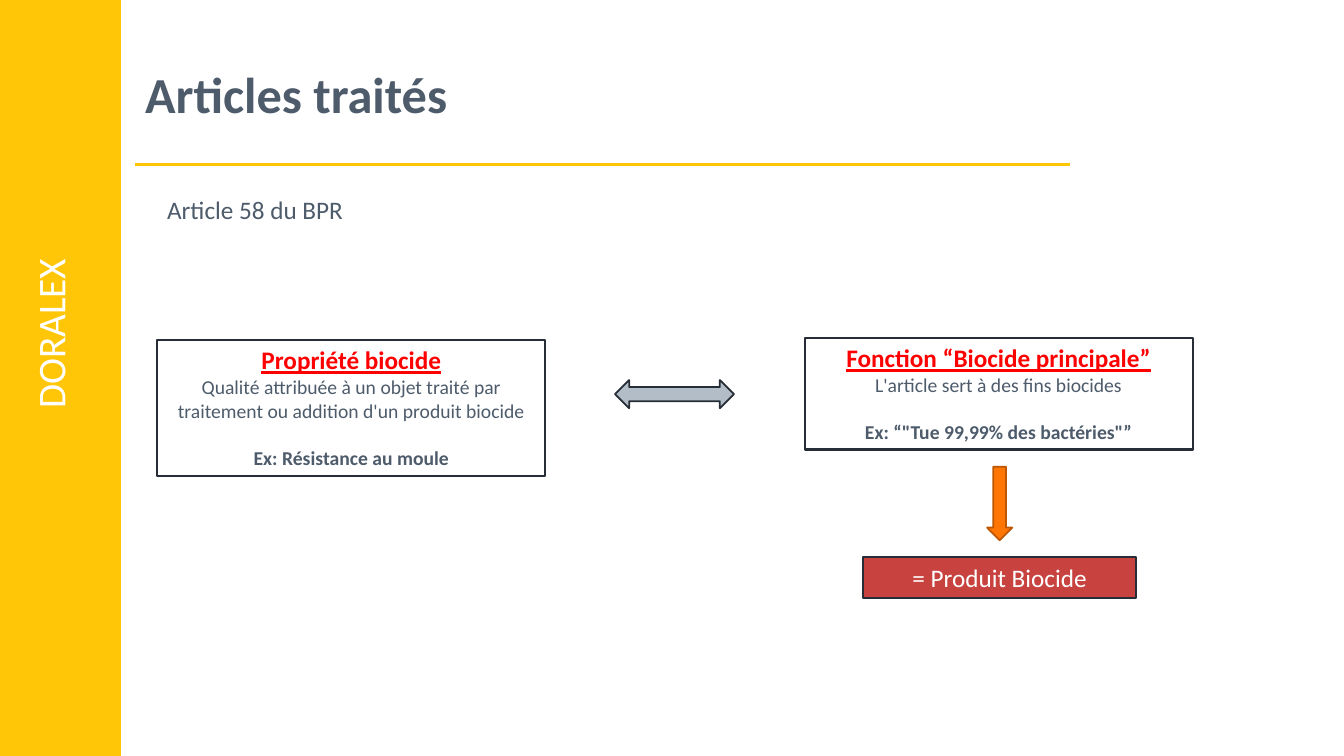
"""Build the slide on treated articles."""
from dataclasses import dataclass

from lxml.etree import SubElement
from pptx import Presentation
from pptx.dml.color import RGBColor
from pptx.enum.shapes import MSO_CONNECTOR, MSO_SHAPE
from pptx.enum.text import MSO_ANCHOR, PP_ALIGN
from pptx.oxml.ns import qn
from pptx.shapes.autoshape import Shape
from pptx.slide import Slide
from pptx.util import Inches, Pt

GOLD = RGBColor(0xFF, 0xC6, 0x08)
SLATE = RGBColor(0x4D, 0x5B, 0x6B)
DARK = RGBColor(0x26, 0x2D, 0x36)
RED = RGBColor(0xFF, 0x00, 0x00)
BRICK = RGBColor(0xC8, 0x43, 0x40)
GRAY = RGBColor(0xB3, 0xBD, 0xC8)
ORANGE = RGBColor(0xFF, 0x76, 0x05)
RUST = RGBColor(0xBD, 0x57, 0x04)
WHITE = RGBColor(0xFF, 0xFF, 0xFF)
FONT = "Calibri"


@dataclass(frozen=True)
class Area:
    left: float
    top: float
    width: float
    height: float

    def size(self) -> tuple[int, ...]:
        return tuple(Inches(n) for n in (self.left, self.top, self.width, self.height))


@dataclass(frozen=True)
class Block:
    area: Area
    kind: MSO_SHAPE
    fill: RGBColor | None
    line: RGBColor | None = None
    weight: float = 1.5


@dataclass(frozen=True)
class Card:
    area: Area
    head: str
    body: str
    sample: str


BAND = Block(Area(-0.01, 0, 1.21, 7.5), MSO_SHAPE.RECTANGLE, GOLD)
RESULT = Block(Area(8.56, 5.53, 2.71, 0.4), MSO_SHAPE.RECTANGLE, BRICK, DARK)
ARROWS = (
    Block(Area(6.1, 3.77, 1.18, 0.28), MSO_SHAPE.LEFT_RIGHT_ARROW, GRAY, DARK, 1.25),
    Block(Area(9.79, 4.63, 0.25, 0.73), MSO_SHAPE.DOWN_ARROW, ORANGE, RUST, 1.25),
)
CARDS = (
    Card(
        Area(1.56, 3.37, 3.85, 1.35),
        "Propriété biocide",
        "Qualité attribuée à un objet traité par traitement ou addition d'un produit biocide",
        "Ex: Résistance au moule",
    ),
    Card(
        Area(7.98, 3.35, 3.85, 1.11),
        "Fonction “Biocide principale”",
        "L'article sert à des fins biocides",
        "Ex: “\"Tue 99,99% des bactéries\"”",
    ),
)


def style(run, size: float, color: RGBColor, bold: bool = False, under: bool = False) -> None:
    font = run.font
    font.name, font.size, font.bold, font.underline = FONT, Pt(size), bold, under
    font.color.rgb = color


def write(shape: Shape, text: str, size: float, color: RGBColor,
          align: PP_ALIGN = PP_ALIGN.LEFT, bold: bool = False) -> None:
    frame = shape.text_frame
    frame.text = text
    frame.word_wrap = True
    line = frame.paragraphs[0]
    line.alignment = align
    style(line.runs[0], size, color, bold)


def draw(slide: Slide, block: Block) -> Shape:
    shape = slide.shapes.add_shape(block.kind, *block.area.size())
    shape.shadow.inherit = False
    if block.fill is None:
        shape.fill.background()
    else:
        shape.fill.solid()
        shape.fill.fore_color.rgb = block.fill
    if block.line is None:
        shape.line.fill.background()
    else:
        shape.line.color.rgb = block.line
        shape.line.width = Pt(block.weight)
    return shape


def fill_card(slide: Slide, card: Card) -> None:
    frame = draw(slide, Block(card.area, MSO_SHAPE.RECTANGLE, None, DARK)).text_frame
    frame.word_wrap = True
    frame.vertical_anchor = MSO_ANCHOR.TOP
    first, last = frame.paragraphs[0], frame.add_paragraph()
    first.text = f"{card.head}\n{card.body}"
    last.text = card.sample
    last.space_before = Pt(17)
    first.alignment = last.alignment = PP_ALIGN.CENTER
    head, body = first.runs
    style(head, 18, RED, bold=True, under=True)
    style(body, 14, SLATE)
    style(last.runs[0], 14, SLATE, bold=True)


def add_rule(slide: Slide) -> None:
    rule = slide.shapes.add_connector(
        MSO_CONNECTOR.STRAIGHT, Inches(1.34), Inches(1.63), Inches(10.61), Inches(1.63))
    rule.line.color.rgb = GOLD
    rule.line.width = Pt(2.25)
    SubElement(rule._element.spPr, qn("a:effectLst"))


def main() -> None:
    deck = Presentation()
    deck.slide_width, deck.slide_height = Inches(13.33), Inches(7.5)
    slide = deck.slides.add_slide(deck.slide_layouts[5])

    draw(slide, BAND)
    side = slide.shapes.add_textbox(*Area(0.21, 2.2, 0.67, 2.22).size())
    write(side, "DORALEX", 28, WHITE, PP_ALIGN.CENTER)
    side.text_frame._txBody.bodyPr.set("vert", "vert270")
    add_rule(slide)

    title = slide.shapes.title
    title.left, title.top, title.width, title.height = Area(1.34, 0.3, 9.27, 1.25).size()
    write(title, "Articles traités", 36, SLATE, bold=True)
    title.text_frame.vertical_anchor = MSO_ANCHOR.MIDDLE

    note = slide.shapes.add_textbox(*Area(1.56, 1.88, 2.74, 0.4).size())
    write(note, "Article 58 du BPR", 18, SLATE)
    for card in CARDS:
        fill_card(slide, card)
    for arrow in ARROWS:
        draw(slide, arrow)
    write(draw(slide, RESULT), "= Produit Biocide", 18, WHITE, PP_ALIGN.CENTER)
    deck.save("out.pptx")


if __name__ == "__main__":
    main()
